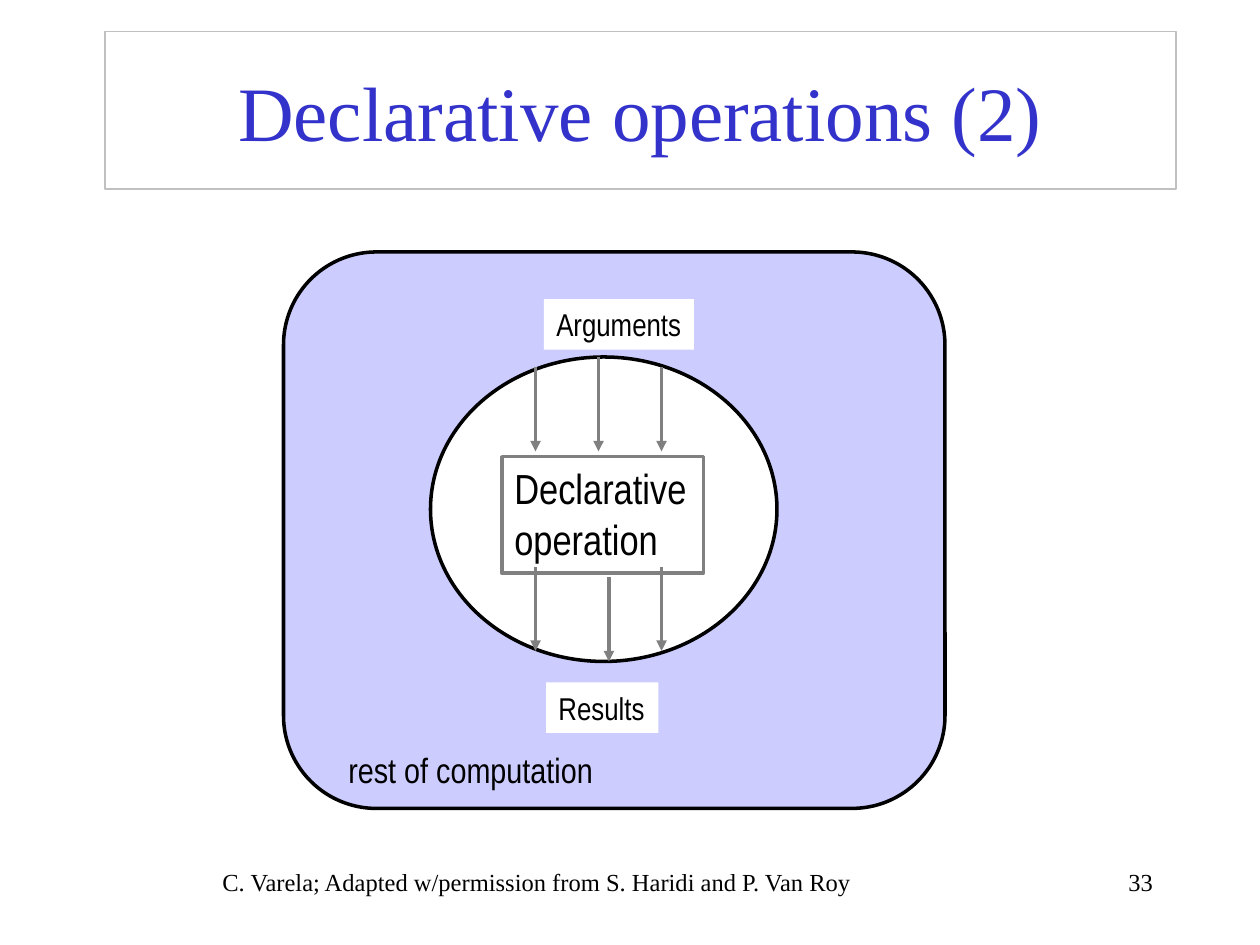
from lxml import etree
from pptx import Presentation
from pptx.dml.color import RGBColor as RGB
from pptx.enum.shapes import MSO_CONNECTOR as CONN, MSO_SHAPE as SHAPE
from pptx.enum.text import MSO_ANCHOR as ANCHOR, MSO_AUTO_SIZE as AUTO, PP_ALIGN as ALIGN
from pptx.oxml.ns import qn
from pptx.util import Inches, Pt

COLORS = {"black": "000000", "white": "FFFFFF", "lavender": "CCCCFF",
          "gray": "808080", "silver": "C0C0C0", "blue": "3333CC"}
SERIF, NARROW = "Times New Roman", "Arial Narrow"

prs = Presentation()
prs.slide_width, prs.slide_height = Inches(10), Inches(7.5)
s = prs.slides.add_slide(prs.slide_layouts[6])
U = prs.slide_width / 120


def add_box(kind, cells, fill=None, line=None, width=2):
    sp = s.shapes.add_shape(kind, *[round(c * U) for c in cells])
    sp.shadow.inherit = False
    if fill:
        sp.fill.solid()
        sp.fill.fore_color.rgb = RGB.from_string(COLORS[fill])
    else:
        sp.fill.background()
    if line:
        sp.line.color.rgb = RGB.from_string(COLORS[line])
        sp.line.width = Pt(width)
    else:
        sp.line.fill.background()
    return sp


def set_text(sp, text, size, font, color="black", align=ALIGN.LEFT, wrap=False, anchor=ANCHOR.TOP):
    tf = sp.text_frame
    tf.word_wrap = wrap
    tf.auto_size = AUTO.NONE if wrap else AUTO.SHAPE_TO_FIT_TEXT
    tf.vertical_anchor = anchor
    p = tf.paragraphs[0]
    p.text = text
    p.alignment = align
    p.font.size, p.font.name = Pt(size), font
    p.font.color.rgb = RGB.from_string(COLORS[color])


footers = [
    ((20, 82, 80, 6), "C. Varela; Adapted w/permission from S. Haridi and P. Van Roy", ALIGN.LEFT),
    ((86, 82, 25, 6), "33", ALIGN.RIGHT),
]
for cells, text, align in footers:
    tb = s.shapes.add_textbox(*[round(c * U) for c in cells])
    set_text(tb, text, 14, SERIF, align=align, wrap=True)

computation = add_box(SHAPE.ROUNDED_RECTANGLE, (27, 24, 63, 53), "lavender", "black")
computation.adjustments[0] = 0.167
add_box(SHAPE.OVAL, (41, 34, 33, 29), "white", "black")
operation = add_box(SHAPE.RECTANGLE, (47.8, 43.5, 19.2, 11.1), "white", "gray")
set_text(operation, "Declarative\noperation", 24, NARROW)

arrows = [(51, 35, 43), (57, 34, 43), (63, 35, 43),
          (51, 54, 62), (58, 55, 63), (63, 54, 62)]
for col, top, bottom in arrows:
    cn = s.shapes.add_connector(CONN.STRAIGHT, *[round(c * U) for c in (col, top, col, bottom)])
    cn.line.color.rgb = RGB.from_string(COLORS["gray"])
    cn.line.width = Pt(2)
    etree.SubElement(cn.line._get_or_add_ln(), qn("a:tailEnd"), type="triangle")
    etree.SubElement(cn._element.spPr, qn("a:effectLst"))

labels = [((51.8, 28.5, 14.3, 4.8), "Arguments"), ((52, 65, 10.7, 4.8), "Results")]
for cells, text in labels:
    set_text(add_box(SHAPE.RECTANGLE, cells, "white"), text, 18, NARROW)

title = add_box(SHAPE.RECTANGLE, (10, 3, 102, 15), line="silver", width=0.75)
set_text(title, "Declarative operations (2)", 44, SERIF, "blue", ALIGN.CENTER, True, ANCHOR.MIDDLE)

rest = s.shapes.add_textbox(*[round(c * U) for c in (32, 70.7, 25.7, 5.2)])
set_text(rest, "rest of computation", 20, NARROW)

prs.save("out.pptx")
